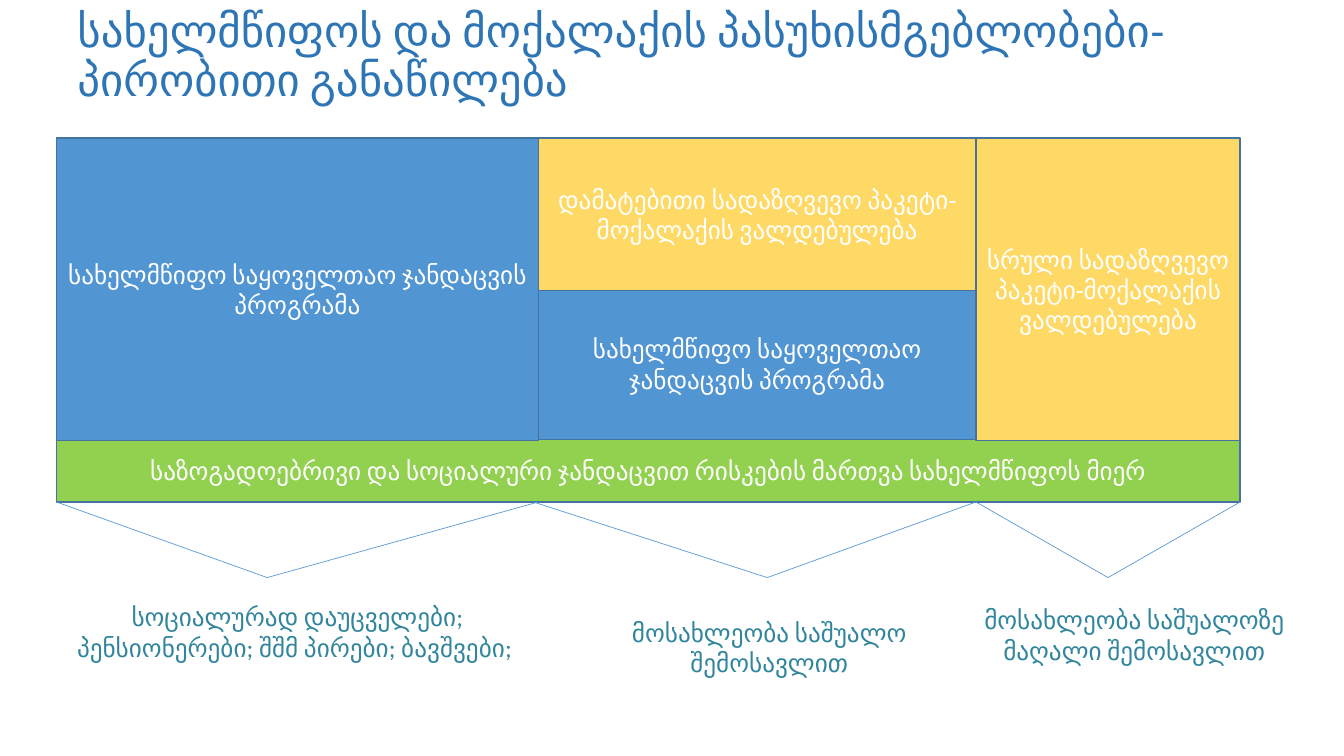
"""Build a slide dividing health care responsibilities between state and citizen."""
import pptx
import pptx.util
import pptx.dml.color
import pptx.enum.shapes
import pptx.enum.text
import pptx.oxml
import pptx.oxml.ns

Inches = pptx.util.Inches
Pt = pptx.util.Pt
RGBColor = pptx.dml.color.RGBColor
PP_ALIGN = pptx.enum.text.PP_ALIGN
MSO_ANCHOR = pptx.enum.text.MSO_ANCHOR

WHITE = RGBColor(0xFF, 0xFF, 0xFF)
STATE_BLUE = RGBColor(0x51, 0x95, 0xD3)
CITIZEN_YELLOW = RGBColor(0xFF, 0xD9, 0x66)
PUBLIC_GREEN = RGBColor(0x92, 0xD0, 0x50)
BORDER = RGBColor(0x43, 0x73, 0x9E)
BRACKET = RGBColor(0x5B, 0x9B, 0xD5)
GROUP_TEAL = RGBColor(0x31, 0x85, 0x9C)
TITLE_BLUE = RGBColor(0x2E, 0x75, 0xB6)


def write(sp, text, size, color, align, anchor):
    tf = sp.text_frame
    tf.word_wrap = True
    tf.vertical_anchor = anchor
    tf.text = text
    for p in tf.paragraphs:
        p.alignment = align
        for r in p.runs:
            r.font.name = "Calibri"
            r.font.size = Pt(size)
            r.font.color.rgb = color


prs = pptx.Presentation()
prs.slide_width = Inches(13.33)
prs.slide_height = Inches(7.5)
s = prs.slides.add_slide(prs.slide_layouts[6])

LEFT, MIDDLE, RIGHT, END = 0.56, 5.34, 9.68, 12.3
TOP, BASE_TOP, BASE_BOTTOM, TIP = 1.37, 4.35, 4.98, 5.73
STATE_PROGRAM = "სახელმწიფო საყოველთაო ჯანდაცვის პროგრამა"

blocks = [
    (LEFT, BASE_TOP, END - LEFT, BASE_BOTTOM - BASE_TOP, PUBLIC_GREEN,
     "საზოგადოებრივი და სოციალური ჯანდაცვით რისკების მართვა სახელმწიფოს მიერ"),
    (LEFT, TOP, MIDDLE - LEFT, 3, STATE_BLUE, STATE_PROGRAM),
    (MIDDLE, 2.86, RIGHT - MIDDLE, 1.5, STATE_BLUE, STATE_PROGRAM),
    (MIDDLE, TOP, RIGHT - MIDDLE, 1.51, CITIZEN_YELLOW,
     "დამატებითი სადაზღვევო პაკეტი-მოქალაქის ვალდებულება"),
    (RIGHT, TOP, END - RIGHT, 3, CITIZEN_YELLOW,
     "სრული სადაზღვევო პაკეტი-მოქალაქის ვალდებულება"),
]
for x, y, w, h, color, text in blocks:
    sp = s.shapes.add_shape(pptx.enum.shapes.MSO_SHAPE.RECTANGLE,
                            Inches(x), Inches(y), Inches(w), Inches(h))
    sp.shadow.inherit = False
    sp.fill.solid()
    sp.fill.fore_color.rgb = color
    sp.line.color.rgb = BORDER
    sp.line.width = Pt(1)
    write(sp, text, 18, WHITE, PP_ALIGN.CENTER, MSO_ANCHOR.MIDDLE)

brackets = [(LEFT, 2.65, MIDDLE), (5.29, 7.61, RIGHT), (RIGHT, 10.99, END)]
for start, tip, end in brackets:
    for x in (start, end):
        line = s.shapes.add_connector(
            pptx.enum.shapes.MSO_CONNECTOR.STRAIGHT,
            Inches(x), Inches(BASE_BOTTOM), Inches(tip), Inches(TIP))
        line.line.color.rgb = BRACKET
        line.line.width = Pt(0.5)
        sp_pr = line._element.spPr
        sp_pr.append(pptx.oxml.parse_xml(
            "<a:effectLst %s/>" % pptx.oxml.ns.nsdecls("a")))

groups = [
    (0.5, 5.92, 4.9, "სოციალურად დაუცველები;\nპენსიონერები; შშმ პირები; ბავშვები; "),
    (5.9, 6.07, 3.46, "მოსახლეობა საშუალო შემოსავლით"),
    (9.6, 5.95, 3.3, "მოსახლეობა საშუალოზე მაღალი შემოსავლით"),
]
for x, y, w, text in groups:
    sp = s.shapes.add_textbox(Inches(x), Inches(y), Inches(w), Inches(0.71))
    write(sp, text, 18, GROUP_TEAL, PP_ALIGN.CENTER, MSO_ANCHOR.TOP)

title = s.shapes.add_textbox(Inches(0.67), Inches(0.3), Inches(12.03), Inches(0.54))
write(title, "სახელმწიფოს და მოქალაქის პასუხისმგებლობები-პირობითი განაწილება",
      32, TITLE_BLUE, PP_ALIGN.LEFT, MSO_ANCHOR.MIDDLE)
title.text_frame.paragraphs[0].line_spacing = 0.9

prs.save("out.pptx")
